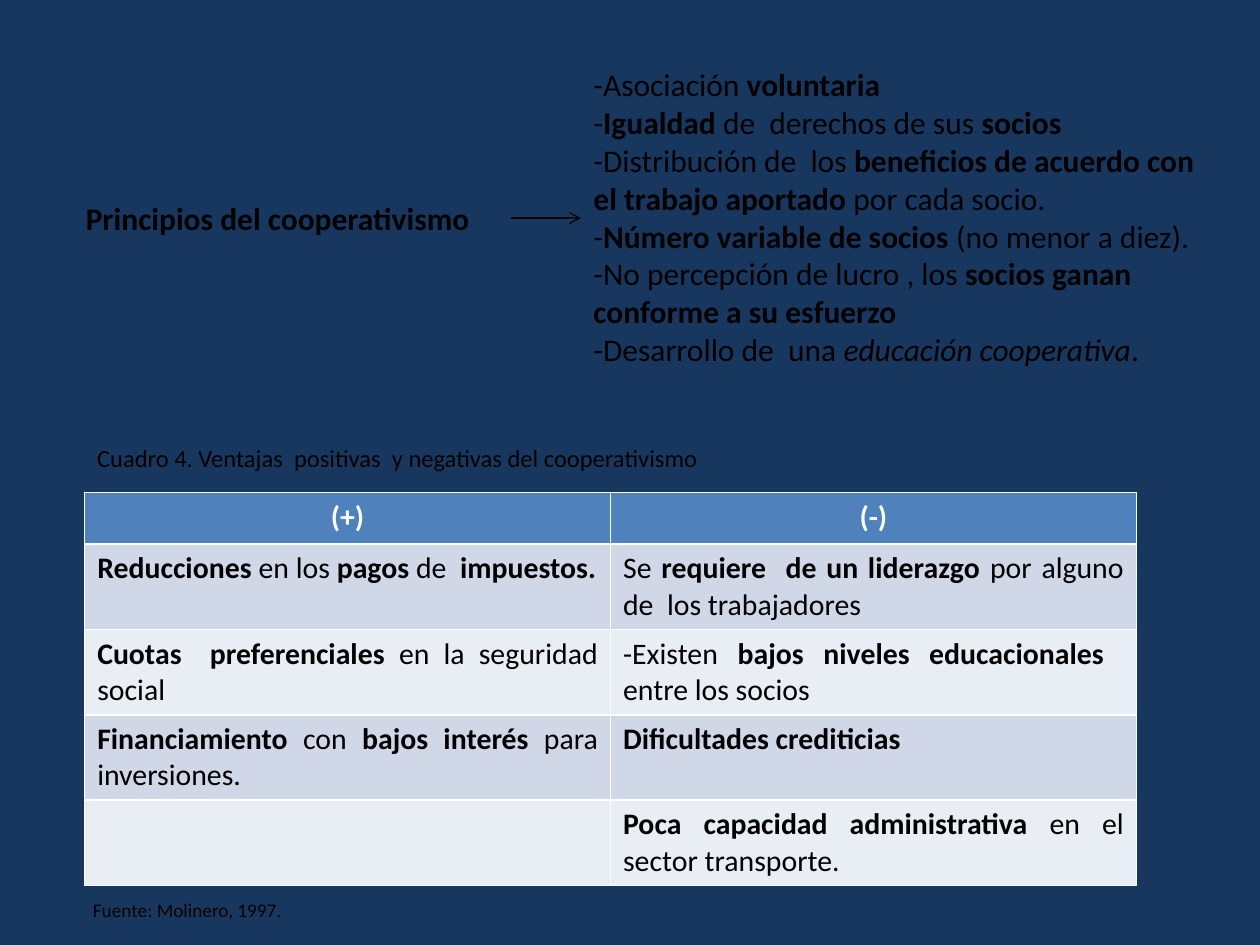
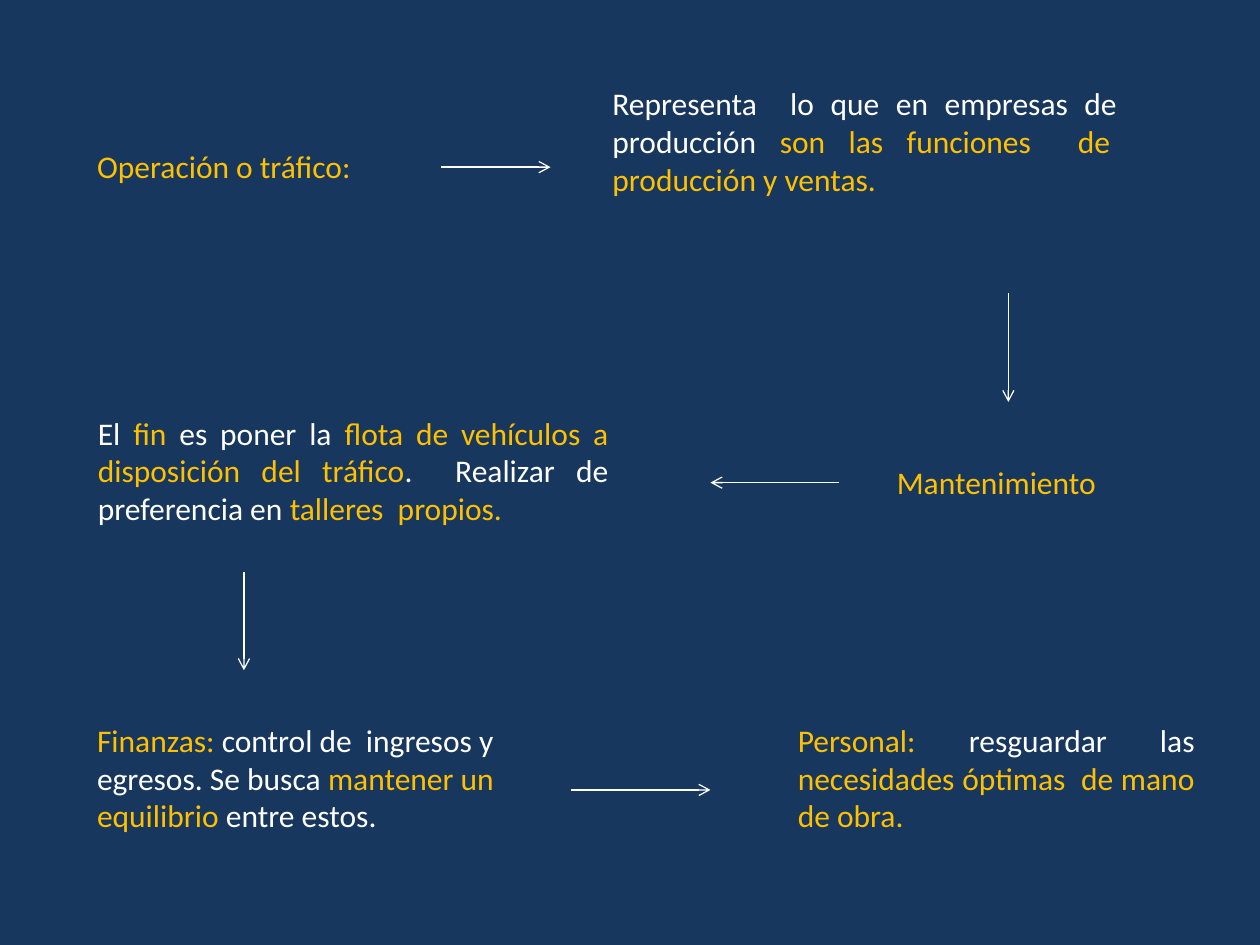
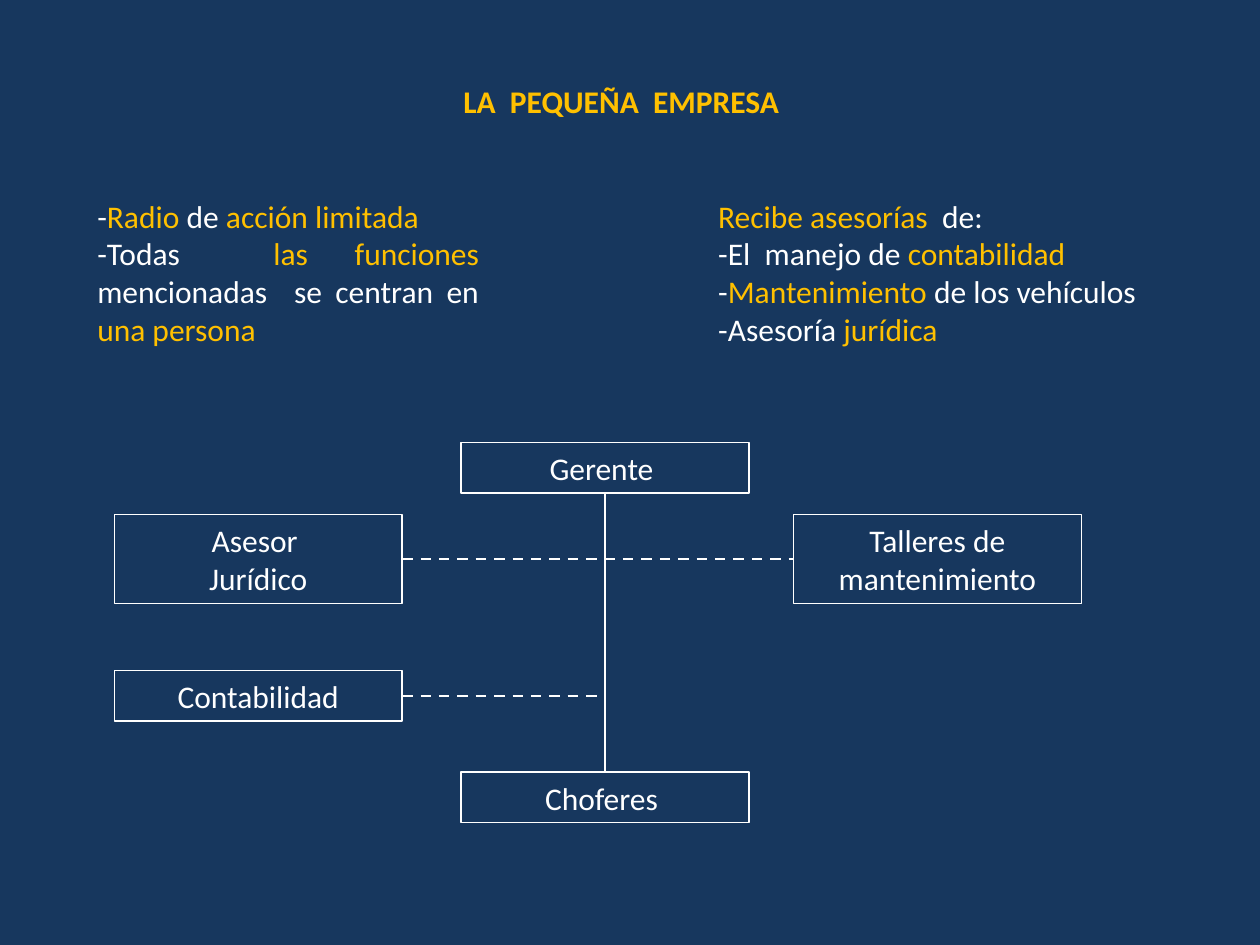
from lxml import etree
from pptx import Presentation
from pptx.dml.color import RGBColor
from pptx.enum import dml, shapes, text
from pptx.oxml.ns import qn
from pptx.util import Pt

FONT = "Calibri"
COLORS = {
    "background": "17375E",
    "dark": "000000",
    "light": "FFFFFF",
    "gold": "FFC000",
    "header": "4F81BD",
    "band_odd": "D0D8E8",
    "band_even": "E9EDF4",
}
LEFT, CENTER, JUSTIFY = text.PP_ALIGN.LEFT, text.PP_ALIGN.CENTER, text.PP_ALIGN.JUSTIFY


def write(frame, lines, color, align=LEFT, size=18, accent=None):
    """Fill the frame; parts between asterisks get the accent colour, or bold without one."""
    frame.word_wrap = True
    frame.auto_size = text.MSO_AUTO_SIZE.NONE
    frame.text = "\n".join(lines)
    for paragraph in frame.paragraphs:
        pieces = paragraph.text.split("*")
        paragraph.clear()
        paragraph.alignment = align
        paragraph.space_before = Pt(0)
        properties = paragraph._p.get_or_add_pPr()
        properties.set("marL", "0")
        properties.set("indent", "0")
        etree.SubElement(properties, qn("a:buNone"))
        for position, piece in enumerate(pieces):
            if not piece:
                continue
            emphasized = position % 2 == 1
            run = paragraph.add_run()
            run.text = piece
            run.font.name = FONT
            run.font.size = Pt(size)
            run.font.bold = emphasized and accent is None
            shade = accent if emphasized and accent else color
            run.font.color.rgb = RGBColor.from_string(COLORS[shade])


def draw_line(slide, start, end, color, width=0.75, dashed=False, arrow=False):
    line = slide.shapes.add_connector(
        shapes.MSO_CONNECTOR.STRAIGHT, *(Pt(value) for value in start + end))
    line.line.color.rgb = RGBColor.from_string(COLORS[color])
    line.line.width = Pt(width)
    if dashed:
        line.line.dash_style = dml.MSO_LINE.DASH
    if arrow:
        etree.SubElement(line.line._get_or_add_ln(), qn("a:tailEnd"), type="arrow")
    etree.SubElement(line._element.spPr, qn("a:effectLst"))


prs = Presentation()
prs.slide_width, prs.slide_height = Pt(720), Pt(540)
master_fill = prs.slide_master.background.fill
master_fill.solid()
master_fill.fore_color.rgb = RGBColor.from_string(COLORS["background"])
title_and_content, two_content, blank = (prs.slide_layouts[i] for i in (1, 3, 6))

# Slide 1: principles and balance of cooperatives
slide = prs.slides.add_slide(title_and_content)
heading, principles = slide.placeholders
heading.left, heading.top, heading.width, heading.height = Pt(41.8), Pt(110.2), Pt(272), Pt(29)
write(heading.text_frame, ["*Principios del cooperativismo*"], "dark")

principles.left, principles.top, principles.width, principles.height = (
    Pt(331.9), Pt(33.8), Pt(368), Pt(181.5))
write(principles.text_frame, [
    "-Asociación *voluntaria*",
    "-*Igualdad* de  derechos de sus *socios*",
    "-Distribución de  los *beneficios de acuerdo con el trabajo aportado* por cada socio.",
    "-*Número variable de socios *(no menor a diez).",
    "-No percepción de lucro , los *socios ganan conforme a su esfuerzo*",
    "-Desarrollo de  una *educación cooperativa*.",
], "dark")
education = principles.text_frame.paragraphs[-1].runs[1]
education.font.bold, education.font.italic = False, True

balance = [
    ("*(+)*", "*(-)*"),
    ("*Reducciones* en los *pagos *de  *impuestos.*",
     "Se *requiere  de un liderazgo *por alguno de  los trabajadores"),
    ("*Cuotas  preferenciales *en la seguridad social",
     "-Existen *bajos niveles educacionales  *entre los socios"),
    ("*Financiamiento* con *bajos interés *para inversiones.",
     "*Dificultades crediticias*"),
    ("", "*Poca capacidad administrativa *en el sector transporte."),
]
table = slide.shapes.add_table(
    len(balance), 2, Pt(48.4), Pt(281.4), Pt(601), Pt(221.5)).table
for row_index, entries in enumerate(balance):
    is_header = row_index == 0
    table.rows[row_index].height = Pt(29.5 if is_header else 48)
    band = "header" if is_header else ("band_odd" if row_index % 2 else "band_even")
    for column_index, entry in enumerate(entries):
        cell = table.cell(row_index, column_index)
        cell.fill.solid()
        cell.fill.fore_color.rgb = RGBColor.from_string(COLORS[band])
        if entry:
            write(cell.text_frame, [entry], "light" if is_header else "dark",
                  CENTER if is_header else JUSTIFY, size=17)

for left, top, width, height, size, note in [
    (48.4, 249.8, 459, 24.5, 14, "Cuadro 4. Ventajas  positivas  y negativas del cooperativismo"),
    (46, 509.8, 272, 21, 11, "Fuente: Molinero, 1997."),
]:
    caption = slide.shapes.add_textbox(Pt(left), Pt(top), Pt(width), Pt(height))
    write(caption.text_frame, [note], "dark", size=size)
draw_line(slide, (292, 124.6), (331.9, 124.6), "dark", arrow=True)

# Slide 2: chain of company functions
slide = prs.slides.add_slide(blank)
for left, top, width, height, align, function in [
    (48.4, 80.6, 187, 29, JUSTIFY, "*Operación o tráfico:*"),
    (342.9, 44.6, 312, 72.7, JUSTIFY,
     "Representa  lo que en empresas de  producción *son las funciones  de  producción y ventas.*"),
    (505.4, 261.2, 137, 29, LEFT, "*Mantenimiento*"),
    (48.8, 232.8, 306, 72.7, JUSTIFY,
     "El *fin* es poner la *flota de vehículos a disposición del tráfico*.  "
     "Realizar de preferencia en *talleres  propios.*"),
    (48.4, 408.4, 249, 72.7, LEFT,
     "*Finanzas:* control de  ingresos y egresos. Se busca *mantener un equilibrio* entre estos."),
    (448.8, 408.4, 241, 72.7, JUSTIFY,
     "*Personal: *resguardar las *necesidades óptimas  de mano de obra.*"),
]:
    box = slide.shapes.add_textbox(Pt(left), Pt(top), Pt(width), Pt(height))
    write(box.text_frame, [function], "light", align, accent="gold")

for start, end in [
    ((252, 95.5), (314.6, 95.5)),
    ((576.2, 167.5), (576.2, 229.7)),
    ((479.5, 275.8), (406, 275.8)),
    ((139.4, 326.9), (139.4, 383)),
    ((326.2, 451.4), (406, 451.4)),
]:
    draw_line(slide, start, end, "light", arrow=True)

# Slide 3: the small company and its organization chart
slide = prs.slides.add_slide(two_content)
for part, (left, top, width, height), align, lines in zip(
    slide.placeholders,
    [(178.6, 43.2, 357, 29), (48.4, 108.7, 232.6, 94.5), (403.2, 108.7, 266, 94.5)],
    [CENTER, JUSTIFY, JUSTIFY],
    [
        ["*LA  PEQUEÑA  EMPRESA *"],
        ["-*Radio* de *acción limitada*",
         "-Todas  *las funciones *mencionadas  se centran en *una persona*"],
        ["*Recibe asesorías  *de:",
         "-El  manejo de *contabilidad*",
         "-*Mantenimiento* de los vehículos",
         "-Asesoría *jurídica*"],
    ],
):
    part.left, part.top, part.width, part.height = Pt(left), Pt(top), Pt(width), Pt(height)
    write(part.text_frame, lines, "light", align, accent="gold")
slide.shapes.title.text_frame.paragraphs[0].runs[0].font.bold = True

ROLE_WIDTH = 164.5
left_column, trunk_column, right_column = 65.3, 263.5, 453.4
trunk = trunk_column + ROLE_WIDTH / 2
for left, top, height, role in [
    (trunk_column, 252.8, 29, ["Gerente "]),
    (left_column, 294, 51, ["Asesor ", "Jurídico"]),
    (left_column, 383, 29, ["Contabilidad"]),
    (right_column, 294, 51, ["Talleres de mantenimiento"]),
    (trunk_column, 441.2, 29, ["Choferes "]),
]:
    box = slide.shapes.add_shape(
        shapes.MSO_SHAPE.RECTANGLE, Pt(left), Pt(top), Pt(ROLE_WIDTH), Pt(height))
    box.shadow.inherit = False
    box.fill.background()
    box.line.color.rgb = RGBColor.from_string(COLORS["light"])
    box.line.width = Pt(0.75)
    write(box.text_frame, role, "light", CENTER)

draw_line(slide, (trunk, 281.8), (trunk, 441.2), "light", 1.5)
for y, end in [(319.5, right_column), (397.8, trunk)]:
    draw_line(slide, (left_column + ROLE_WIDTH, y), (end, y), "light", 1.5, dashed=True)

prs.save("out.pptx")
